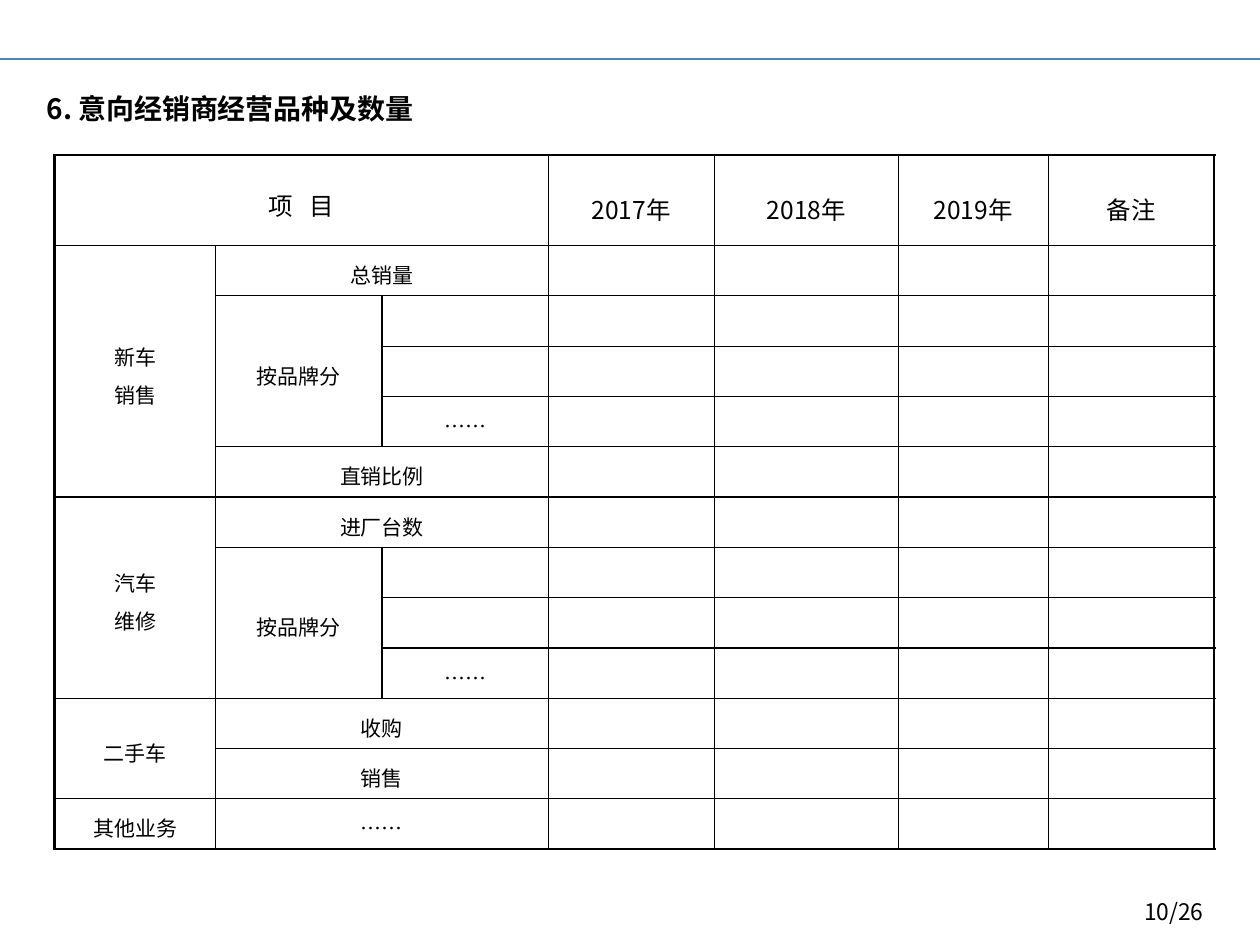
from lxml import etree
from pptx import Presentation
from pptx.dml.color import RGBColor
from pptx.enum.shapes import MSO_CONNECTOR
from pptx.enum.text import MSO_ANCHOR, PP_ALIGN
from pptx.oxml.ns import qn
from pptx.util import Cm, Pt

BLACK = RGBColor(0x00, 0x00, 0x00)
RULE_BLUE = RGBColor(0x4F, 0x81, 0xBD)
FONT = "Noto Sans CJK SC"
CENTER = PP_ALIGN.CENTER
MIDDLE = MSO_ANCHOR.MIDDLE
STRAIGHT = MSO_CONNECTOR.STRAIGHT
THIN, THICK = Pt(0.75), Pt(1.5)

COLUMN_WIDTHS = [3.25, 3.35, 3.35, 3.35, 3.71, 3.02, 3.35]
ROW_COUNT = 13
TABLE_HEIGHT, HEADER_HEIGHT = 14, 1.83
LAST_ROW, LAST_COLUMN = ROW_COUNT - 1, len(COLUMN_WIDTHS) - 1

HEADERS = {3: "2017年", 4: "2018年", 5: "2019年", 6: "备注"}
# (row, column, rows spanned, columns spanned, text)
ITEMS = [
    (1, 0, 5, 1, "新车\n销售"),
    (1, 1, 1, 2, "总销量"),
    (2, 1, 3, 1, "按品牌分"),
    (4, 2, 1, 1, "……"),
    (5, 1, 1, 2, "直销比例"),
    (6, 0, 4, 1, "汽车\n维修"),
    (6, 1, 1, 2, "进厂台数"),
    (7, 1, 3, 1, "按品牌分"),
    (9, 2, 1, 1, "……"),
    (10, 0, 2, 1, "二手车"),
    (10, 1, 1, 2, "收购"),
    (11, 1, 1, 2, "销售"),
    (12, 0, 1, 1, "其他业务"),
    (12, 1, 1, 2, "……"),
]


def write(text_frame, text, size, bold=False, align=None, spacing=None):
    """Set text in the slide font, for Latin and East Asian characters."""
    text_frame.text = text
    for paragraph in text_frame.paragraphs:
        paragraph.alignment = align
        paragraph.line_spacing = spacing
        for run in paragraph.runs:
            run.font.size = Pt(size)
            run.font.bold = bold
            run.font.color.rgb = BLACK
            run.font.name = FONT
            east_asian = etree.SubElement(run.font._element, qn("a:ea"))
            east_asian.set("typeface", FONT)


def add_text(slide, left, top, width, height, text, size, **style):
    box = slide.shapes.add_textbox(Cm(left), Cm(top), Cm(width), Cm(height))
    box.text_frame.word_wrap = True
    write(box.text_frame, text, size, **style)
    return box


def add_top_rule(slide, width):
    rule = slide.shapes.add_connector(STRAIGHT, 0, Cm(1.19), width, Cm(1.19))
    rule.line.color.rgb = RULE_BLUE
    rule.line.width = Pt(1.5)
    etree.SubElement(rule._element.spPr, qn("a:effectLst"))


def set_borders(cell, **widths):
    """Draw black borders; widths must come in the order lnL, lnR, lnT, lnB."""
    properties = cell._tc.get_or_add_tcPr()
    for side, width in widths.items():
        border = etree.SubElement(properties, qn(f"a:{side}"), w=str(width))
        fill = etree.SubElement(border, qn("a:solidFill"))
        etree.SubElement(fill, qn("a:srgbClr"), val=str(BLACK))


def format_cell(cell, row, column):
    bottom = row + cell.span_height - 1
    right = column + cell.span_width - 1
    cell.margin_left = cell.margin_right = Cm(0.05)
    cell.margin_top = cell.margin_bottom = 0
    cell.vertical_anchor = MIDDLE
    set_borders(
        cell,
        lnL=THICK if column == 0 else THIN,
        lnR=THICK if right == LAST_COLUMN else THIN,
        lnT=THICK if row == 0 else THIN,
        lnB=THICK if bottom == LAST_ROW else THIN,
    )
    cell.fill.background()


def fill_item(table, row, column, rows, columns, text, size=12):
    cell = table.cell(row, column)
    if rows * columns > 1:
        cell.merge(table.cell(row + rows - 1, column + columns - 1))
    write(cell.text_frame, text, size, align=CENTER, spacing=1.25)
    return cell


def add_sales_table(slide):
    table = slide.shapes.add_table(
        ROW_COUNT, len(COLUMN_WIDTHS), Cm(1.1), Cm(3.12),
        Cm(sum(COLUMN_WIDTHS)), Cm(TABLE_HEIGHT)).table
    table.first_row = table.horz_banding = False
    for column, width in zip(table.columns, COLUMN_WIDTHS):
        column.width = Cm(width)
    for row in table.rows:
        row.height = Cm((TABLE_HEIGHT - HEADER_HEIGHT) / (ROW_COUNT - 1))
    table.rows[0].height = Cm(HEADER_HEIGHT)

    item_header = fill_item(table, 0, 0, 1, 3, "项 目", size=14)
    letter_spacing = item_header.text_frame.paragraphs[0].runs[0].font._element
    letter_spacing.set("spc", "300")
    for column, text in HEADERS.items():
        write(table.cell(0, column).text_frame, text, 14, align=CENTER, spacing=1.5)
    for item in ITEMS:
        fill_item(table, *item)
    for row in range(ROW_COUNT):
        for column in range(len(COLUMN_WIDTHS)):
            format_cell(table.cell(row, column), row, column)


def main():
    presentation = Presentation()
    presentation.slide_width, presentation.slide_height = Cm(25.4), Cm(19.05)
    slide = presentation.slides.add_slide(presentation.slide_layouts[6])
    add_top_rule(slide, presentation.slide_width)
    add_text(slide, 0.69, 1.73, 24.2, 1.02, "6. 意向经销商经营品种及数量", 16, bold=True)
    add_sales_table(slide)
    page_number = add_text(slide, 22.02, 17.86, 3.28, 1.02, "10/26", 13, align=CENTER)
    page_number.text_frame.vertical_anchor = MIDDLE
    presentation.save("out.pptx")


if __name__ == "__main__":
    main()
